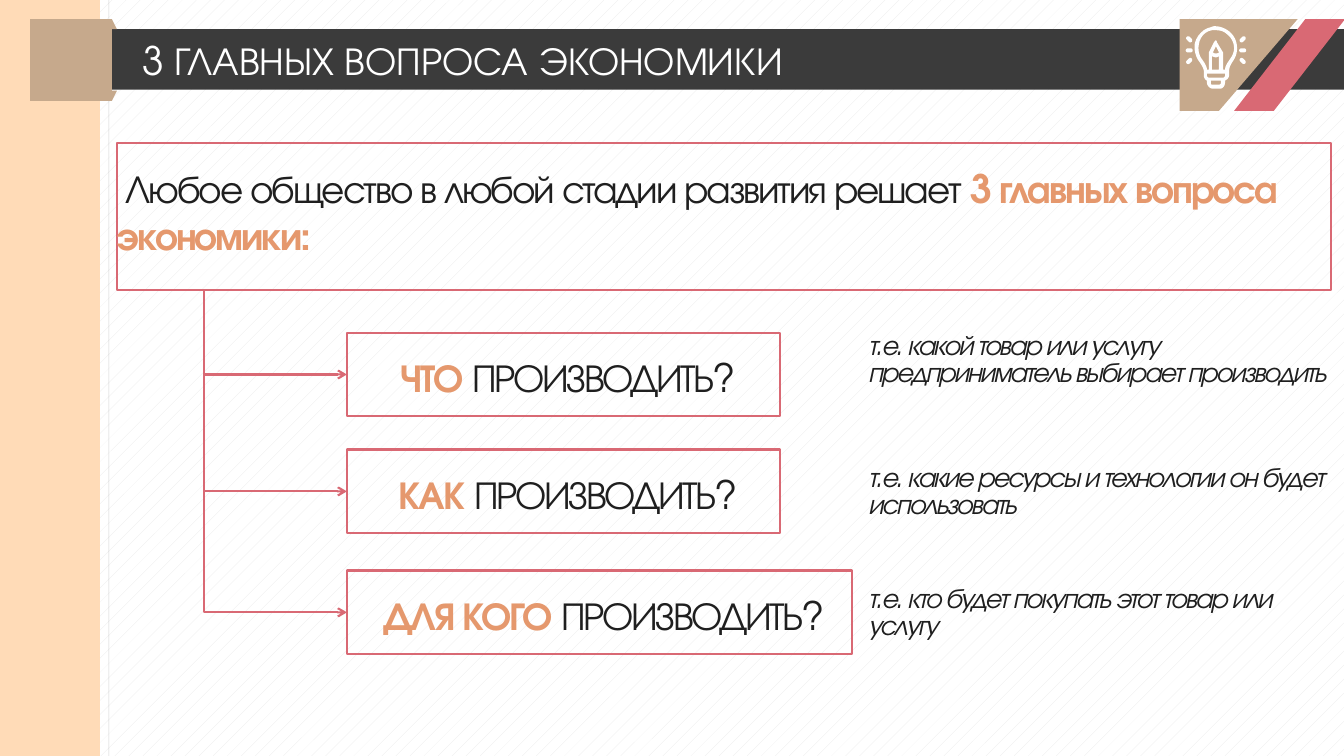
from dataclasses import dataclass

from lxml.etree import SubElement
from pptx import Presentation
from pptx.dml.color import RGBColor
from pptx.enum.dml import MSO_PATTERN
from pptx.enum.shapes import MSO_CONNECTOR, MSO_SHAPE
from pptx.enum.text import MSO_ANCHOR, PP_ALIGN
from pptx.oxml.ns import qn
from pptx.util import Inches, Pt

FONT = "TeX Gyre Adventor"
WHITE = RGBColor(0xFF, 0xFF, 0xFF)
HATCH = RGBColor(0xE9, 0xE9, 0xE9)
INK = RGBColor(0x1F, 0x1F, 0x1F)
BAR = RGBColor(0x3B, 0x3B, 0x3B)
PEACH = RGBColor(0xFF, 0xDB, 0xB7)
TAN = RGBColor(0xC6, 0xA9, 0x8C)
ROSE = RGBColor(0xD9, 0x69, 0x74)
ORANGE = RGBColor(0xE5, 0x98, 0x6D)

TEXT_TOP = 0.21
TRUNK_X, TRUNK_Y = 2.02, 2.88

# Contours of the bulb: a start point, then lines (2 numbers) and Bézier curves (6 numbers)
BULB = [
    [(12.06, .46), (12.09, .52), (12.08, .53, 12.07, .53, 12.06, .53),
     (12.05, .53, 12.04, .53, 12.03, .52)],
    [(12.09, .56), (12.09, .69), (12.02, .69), (12.02, .56),
     (12.03, .56, 12.05, .57, 12.06, .57), (12.07, .57, 12.08, .56, 12.09, .56)],
    [(12.06, .3), (12.1, .3, 12.14, .31, 12.17, .34), (12.21, .37, 12.24, .42, 12.24, .48),
     (12.24, .52, 12.22, .56, 12.19, .6), (12.17, .63, 12.15, .66, 12.15, .69),
     (12.13, .69), (12.13, .52), (12.07, .42), (12.07, .41, 12.06, .4, 12.06, .4),
     (12.05, .4, 12.05, .41, 12.04, .42), (11.99, .52), (11.99, .69), (11.97, .69),
     (11.97, .66, 11.95, .63, 11.93, .6), (11.89, .55, 11.88, .5, 11.89, .44),
     (11.9, .37, 11.95, .31, 12.02, .3), (12.03, .3, 12.05, .3, 12.06, .3)],
    [(12.15, .73), (12.15, .75), (12.15, .76, 12.14, .77, 12.13, .77), (11.99, .77),
     (11.98, .77, 11.97, .76, 11.97, .75), (11.97, .73)],
    [(12.11, .8), (12.11, .82), (12.11, .83, 12.1, .84, 12.09, .84), (12.02, .84),
     (12.01, .84, 12.01, .83, 12.01, .82), (12.01, .8)],
    [(12.05, .26), (12.04, .26, 12.03, .26, 12.01, .27), (11.94, .28, 11.87, .35, 11.85, .43),
     (11.84, .5, 11.86, .57, 11.9, .62), (11.92, .65, 11.94, .68, 11.94, .71),
     (11.94, .75), (11.94, .77, 11.95, .79, 11.97, .8), (11.97, .82),
     (11.97, .85, 12, .88, 12.03, .88), (12.1, .88), (12.13, .88, 12.15, .85, 12.15, .82),
     (12.15, .8), (12.17, .79, 12.19, .77, 12.19, .75), (12.19, .71),
     (12.19, .68, 12.2, .65, 12.22, .62), (12.25, .58, 12.27, .53, 12.27, .48),
     (12.27, .41, 12.24, .35, 12.19, .31), (12.15, .28, 12.1, .26, 12.05, .26)],
]


@dataclass
class Question:
    word: str
    note: str
    top: float
    width: float
    note_top: float


QUESTIONS = [
    Question("ЧТО", "т.е. какой товар или услугу предприниматель выбирает производить",
             3.3, 4.3, 3.1),
    Question("КАК", "т.е. какие ресурсы и технологии он будет использовать",
             4.46, 4.3, 4.41),
    Question("ДЛЯ КОГО", "т.е. кто будет покупать этот товар или услугу",
             5.66, 5.01, 5.61),
]


def add_block(shapes, kind, left: float, top: float, width: float, height: float,
              color: RGBColor):
    s = shapes.add_shape(kind, Inches(left), Inches(top), Inches(width), Inches(height))
    s.shadow.inherit = False
    s.fill.solid()
    s.fill.fore_color.rgb = color
    s.line.fill.background()
    return s


def flatten(contour: list[tuple], steps: int = 6) -> list[tuple[int, int]]:
    """Turn one contour of lines and curves into polygon points in EMU."""
    points = [contour[0]]
    for seg in contour[1:]:
        if len(seg) == 2:
            points.append(seg)
            continue
        x0, y0 = points[-1]
        x1, y1, x2, y2, x3, y3 = seg
        for i in range(1, steps + 1):
            t = i / steps
            a, b, c, d = (1 - t) ** 3, 3 * t * (1 - t) ** 2, 3 * t * t * (1 - t), t ** 3
            points.append((a * x0 + b * x1 + c * x2 + d * x3,
                           a * y0 + b * y1 + c * y2 + d * y3))
    return [(Inches(x), Inches(y)) for x, y in points]


def add_outline(shapes, contours: list[list[tuple]], color: RGBColor):
    first, *rest = [flatten(c) for c in contours]
    builder = shapes.build_freeform(*first[0])
    builder.add_line_segments(first[1:])
    for points in rest:
        builder.move_to(*points[0])
        builder.add_line_segments(points[1:])
    s = builder.convert_to_shape()
    s.shadow.inherit = False
    s.fill.solid()
    s.fill.fore_color.rgb = color
    s.line.fill.background()
    return s


def write(s, runs: list[tuple[str, RGBColor, bool]], size: int, top: float = TEXT_TOP,
          spacing: int = -150):
    """Fill a shape with one paragraph of (text, colour, bold) runs."""
    tf = s.text_frame
    tf.word_wrap = True
    tf.margin_left = tf.margin_right = tf.margin_bottom = 0
    tf.margin_top = Inches(top)
    tf.vertical_anchor = MSO_ANCHOR.TOP
    p = tf.paragraphs[0]
    p.alignment = PP_ALIGN.LEFT
    p.font.name = FONT
    p.font.size = Pt(size)
    for text, color, bold in runs:
        r = p.add_run()
        r.text = text
        r.font.color.rgb = color
        r.font.bold = bold
        r.font._element.set("spc", str(spacing))
    return p


def add_text(shapes, left: float, top: float, width: float, height: float):
    return shapes.add_textbox(Inches(left), Inches(top), Inches(width), Inches(height))


def add_frame(shapes, left: float, top: float, width: float, height: float):
    s = add_block(shapes, MSO_SHAPE.RECTANGLE, left, top, width, height, WHITE)
    s.fill.background()
    s.line.color.rgb = ROSE
    s.line.width = Pt(1.5)
    return s


def add_line(shapes, kind, x1: float, y1: float, x2: float, y2: float,
             color: RGBColor, width: float):
    s = shapes.add_connector(kind, Inches(x1), Inches(y1), Inches(x2), Inches(y2))
    s.line.color.rgb = color
    s.line.width = Pt(width)
    SubElement(s._element.spPr, qn("a:effectLst"))
    return s


def add_branch(shapes, box) -> None:
    """Run an arrow down the trunk and across to the left side of the box."""
    s = add_line(shapes, MSO_CONNECTOR.ELBOW, TRUNK_X, TRUNK_Y, 3.44, 4, ROSE, 1.5)
    s.end_connect(box, 1)
    guides = s._element.spPr.find(qn("a:prstGeom")).get_or_add_avLst()
    SubElement(guides, qn("a:gd"), name="adj1", fmla="val 0")
    SubElement(s.line._get_or_add_ln(), qn("a:tailEnd"), type="arrow")


def add_header(shapes) -> None:
    add_block(shapes, MSO_SHAPE.RECTANGLE, 0, 0.29, 13.33, 0.6, BAR)
    add_block(shapes, MSO_SHAPE.RECTANGLE, 0, 0, 0.99, 7.5, PEACH)
    add_block(shapes, MSO_SHAPE.RECTANGLE, 0.3, 0.19, 0.81, 0.81, TAN)
    add_block(shapes, MSO_SHAPE.RIGHT_TRIANGLE, 1.11, 0.19, 0.05, 0.1, TAN)
    fold = add_block(shapes, MSO_SHAPE.RIGHT_TRIANGLE, 1.11, 0.9, 0.05, 0.1, TAN)
    fold._element.spPr.find(qn("a:xfrm")).set("flipV", "1")
    title = add_text(shapes, 1.41, 0.36, 10.54, 0.47)
    write(title, [("3 ГЛАВНЫХ ВОПРОСА ЭКОНОМИКИ", WHITE, False)], 28, top=0, spacing=0)
    title.text_frame.vertical_anchor = MSO_ANCHOR.MIDDLE
    add_outline(shapes, [[(11.7, 0.19), (12.87, 0.19), (12.09, 1.1), (11.7, 1.1)]], TAN)
    stripe = add_block(shapes, MSO_SHAPE.PARALLELOGRAM, 12.24, 0.19, 1.1, 0.91, ROSE)
    stripe.adjustments[0] = 0.776
    add_outline(shapes, [c + [c[0]] for c in BULB], WHITE)
    for x, side in ((11.795, 1), (12.325, -1)):
        for y, angle in ((0.39, 45), (0.5, 0), (0.605, -45)):
            ray = add_block(shapes, MSO_SHAPE.ROUNDED_RECTANGLE,
                            x - 0.035, y - 0.02, 0.07, 0.04, WHITE)
            ray.adjustments[0] = 0.5
            ray.rotation = side * angle


def main() -> None:
    prs = Presentation()
    prs.slide_width, prs.slide_height = Inches(13.33), Inches(7.5)
    slide = prs.slides.add_slide(prs.slide_layouts[6])
    shapes = slide.shapes
    fill = slide.background.fill
    fill.patterned()
    fill.pattern = MSO_PATTERN.PERCENT_5
    fill.fore_color.rgb, fill.back_color.rgb = HATCH, WHITE

    margin = add_line(shapes, MSO_CONNECTOR.STRAIGHT, 1.08, 0, 1.08, 7.5, INK, 0.5)
    color = margin.line._get_or_add_ln().find(".//" + qn("a:srgbClr"))
    SubElement(color, qn("a:alpha"), val="20000")
    add_header(shapes)

    write(add_frame(shapes, 1.16, 1.42, 12.04, 1.46),
          [(" Любое общество в любой стадии развития решает ", INK, False),
           ("3 главных вопроса экономики:", ORANGE, True)], 28)
    for q in QUESTIONS:
        box = add_frame(shapes, 3.44, q.top, q.width, 0.83)
        p = write(box, [(f" {q.word} ", ORANGE, True), ("ПРОИЗВОДИТЬ?", INK, False)], 28)
        p.alignment = PP_ALIGN.CENTER
        p = write(add_text(shapes, 8.61, q.note_top, 4.59, 0.76), [(q.note, INK, False)], 20)
        p.font.italic = True
        p.line_spacing = 0.8
        add_branch(shapes, box)

    prs.save("out.pptx")


if __name__ == "__main__":
    main()
